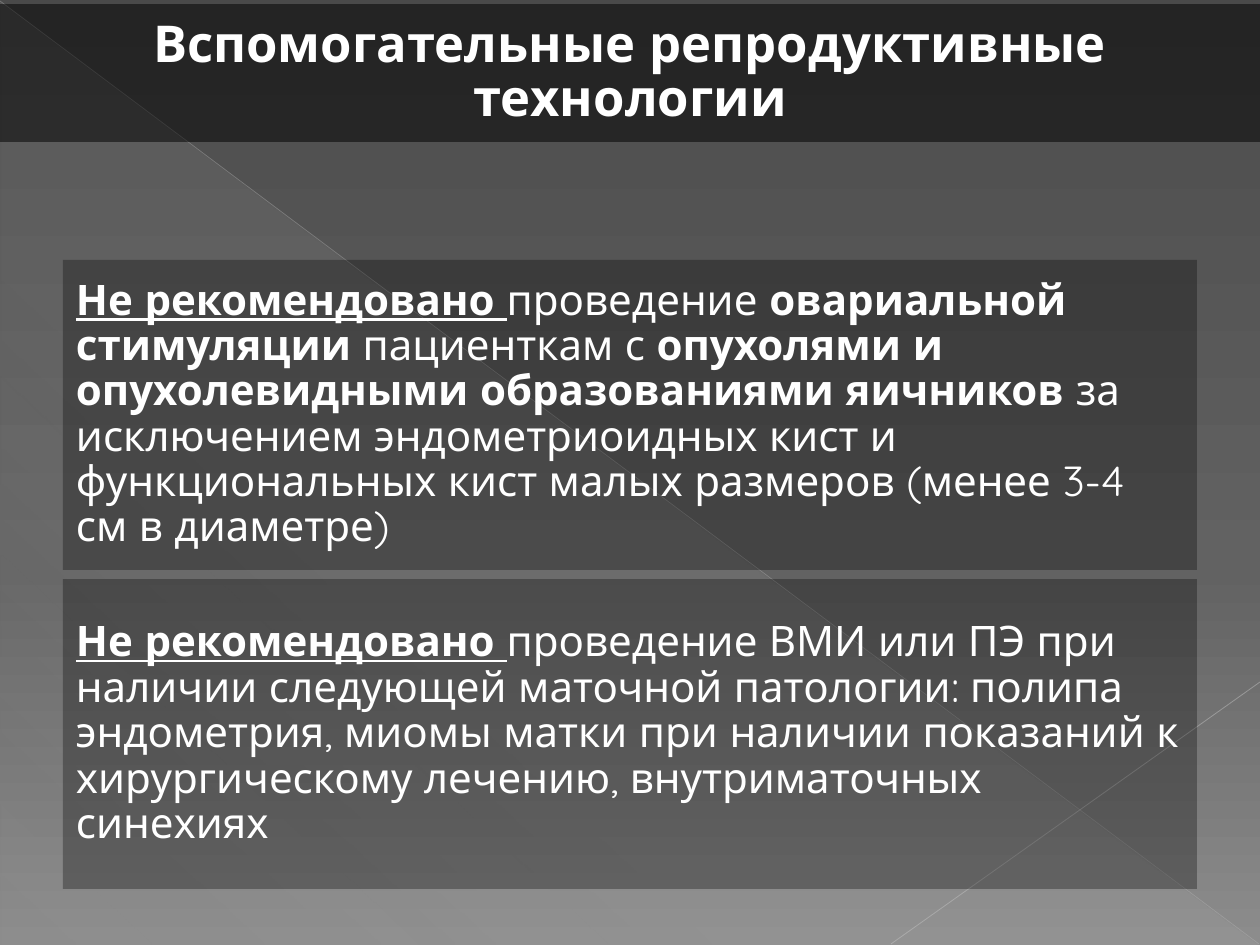
from lxml.etree import SubElement
from pptx import Presentation
from pptx.dml.color import RGBColor
from pptx.enum.shapes import MSO_CONNECTOR as Connector, MSO_SHAPE as Shape
from pptx.enum.text import MSO_ANCHOR as Anchor, MSO_AUTO_SIZE as AutoSize, PP_ALIGN as Align
from pptx.oxml.ns import qn
from pptx.util import Emu, Pt

PX_PER_INCH = 126
WIDTH, HEIGHT = 1260, 945
FONT = "Quicksand"
COLORS = {
    "panel": "000000", "text": "FFFFFF", "sheen": "D2D2D2",
    "long_line": "BFBFBF", "short_line": "C6C6C6",
    "top": "4A4A4A", "middle": "626262", "bottom": "8C8C8C",
}
PLAIN = {"bold": False}
BOLD = {"bold": True}
WARNING = {"bold": True, "underline": True}


def px(length):
    return Emu(round(length * 914400 / PX_PER_INCH))


def set_alpha(parent, percent):
    for color in parent.iter(qn("a:srgbClr")):
        SubElement(color, qn("a:alpha"), val=str(percent * 1000))


class SlideBuilder:
    def __init__(self, page):
        self.page = page

    def gradient(self, fill, holder, stops, angle):
        """Fill with (position, color, opacity) stops."""
        fill.gradient()
        grad = next(holder.iter(qn("a:gradFill")))
        for child in list(grad):
            grad.remove(child)
        stop_list = SubElement(grad, qn("a:gsLst"))
        for position, color, opacity in stops:
            stop = SubElement(stop_list, qn("a:gs"), pos=str(position * 1000))
            SubElement(stop, qn("a:srgbClr"), val=COLORS[color])
            set_alpha(stop, opacity)
        SubElement(grad, qn("a:lin"), ang=str(angle * 60000), scaled="0")

    def background(self, stops, angle):
        self.gradient(self.page.background.fill, self.page.element, stops, angle)

    def triangle(self, left, top, width, height, stops, angle):
        shape = self.page.shapes.add_shape(
            Shape.RIGHT_TRIANGLE, px(left), px(top), px(width), px(height))
        shape.shadow.inherit = False
        shape.line.fill.background()
        self.gradient(shape.fill, shape.element.spPr, stops, angle)

    def line(self, start, end, color, width, opacity):
        line = self.page.shapes.add_connector(
            Connector.STRAIGHT, *map(px, start), *map(px, end))
        line.line.color.rgb = RGBColor.from_string(COLORS[color])
        line.line.width = Pt(width)
        properties = line.element.spPr
        set_alpha(properties, opacity)
        SubElement(properties, qn("a:effectLst"))

    def panel(self, left, top, width, height, spans):
        shape = self.page.shapes.add_shape(
            Shape.RECTANGLE, px(left), px(top), px(width), px(height))
        shape.shadow.inherit = False
        self.dress(shape, 30, spans, 24, 13, Align.LEFT)

    def title(self, left, top, width, height, text):
        box = self.page.shapes.title
        box.left, box.top, box.width, box.height = map(px, (left, top, width, height))
        self.dress(box, 50, [(text, BOLD)], 29, 15, Align.CENTER)
        # The band lies above the decoration
        self.page.shapes.element.append(box.element)

    def dress(self, box, opacity, spans, size, inset, align):
        box.fill.solid()
        box.fill.fore_color.rgb = RGBColor.from_string(COLORS["panel"])
        set_alpha(box.element.spPr, opacity)
        box.line.fill.background()
        frame = box.text_frame
        layout = {"word_wrap": True, "auto_size": AutoSize.NONE,
                  "vertical_anchor": Anchor.MIDDLE}
        for side in ("left", "top", "right", "bottom"):
            layout[f"margin_{side}"] = px(inset)
        for name, value in layout.items():
            setattr(frame, name, value)
        para = frame.paragraphs[0]
        para.alignment = align
        para.line_spacing = 0.9
        for text, style in spans:
            span = para.add_run()
            span.text = text
            span.font.color.rgb = RGBColor.from_string(COLORS["text"])
            for name, value in {"name": FONT, "size": Pt(size), **style}.items():
                setattr(span.font, name, value)


RECOMMENDATIONS = [
    [
        ("Не рекомендовано ", WARNING),
        ("проведение", PLAIN),
        (" овариальной стимуляции", BOLD),
        (" пациенткам с ", PLAIN),
        ("опухолями и опухолевидными образованиями яичников", BOLD),
        (" за исключением эндометриоидных кист и функциональных кист "
         "малых размеров (менее 3-4 см в диаметре)", PLAIN),
    ],
    [
        ("Не рекомендовано ", WARNING),
        ("проведение ВМИ или ПЭ при наличии следующей маточной патологии: "
         "полипа эндометрия, миомы матки при наличии показаний к "
         "хирургическому лечению, внутриматочных синехиях", PLAIN),
    ],
]


def main():
    deck = Presentation()
    deck.slide_width, deck.slide_height = px(WIDTH), px(HEIGHT)
    builder = SlideBuilder(deck.slides.add_slide(deck.slide_layouts[5]))

    # Background and decoration
    builder.background([(0, "top", 100), (60, "middle", 100), (100, "bottom", 100)], 90)
    builder.triangle(1, 2, 1258, 943,
                     [(0, "sheen", 10), (70, "sheen", 8), (100, "sheen", 1)], 133)
    builder.line((0, 1), (1259, 944), "long_line", 0.39, 35)
    builder.line((1260, 682), (891, 944), "short_line", 0.47, 45)

    # Recommendations
    panel_height, gap = 310, 9
    for index, spans in enumerate(RECOMMENDATIONS):
        builder.panel(63, 260 + index * (panel_height + gap), 1134, panel_height, spans)

    # Title band
    builder.title(0, 4, WIDTH, 138, "Вспомогательные репродуктивные технологии")

    deck.save("out.pptx")


if __name__ == "__main__":
    main()
